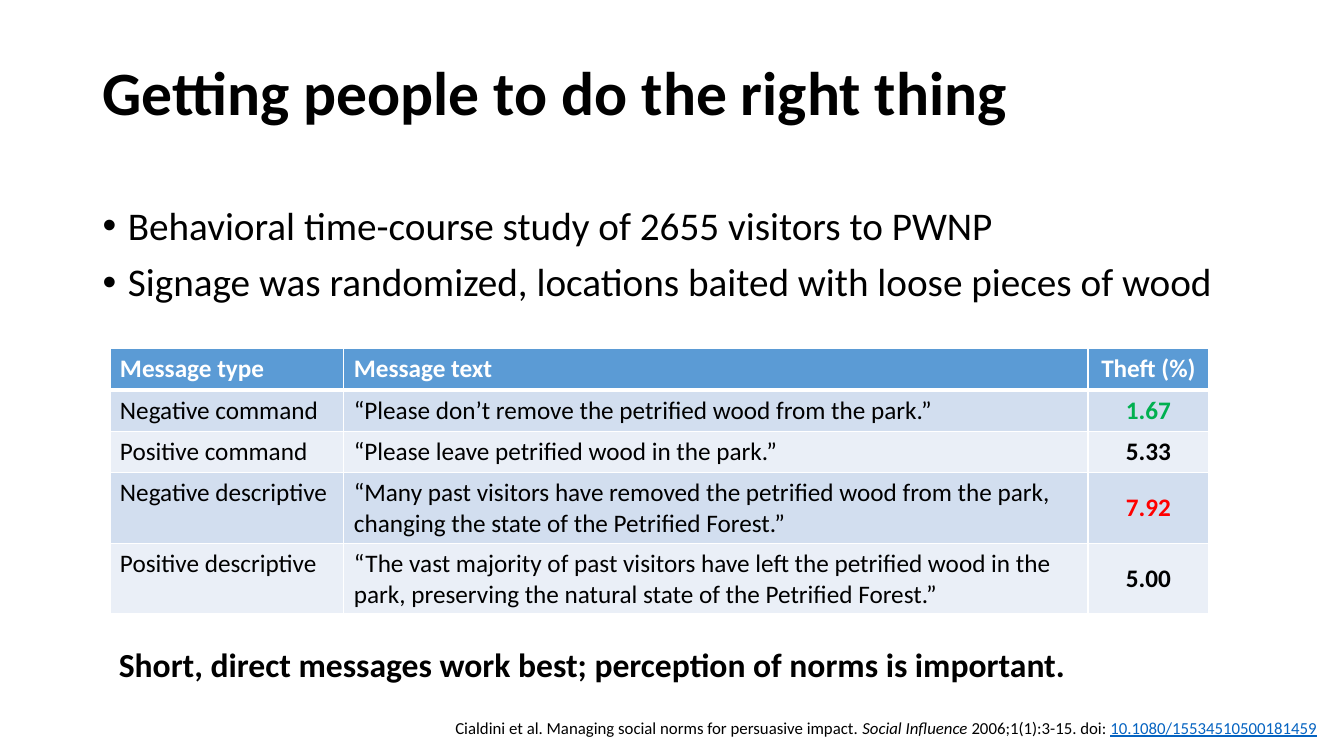
from dataclasses import dataclass

from lxml.etree import SubElement
from pptx import Presentation
from pptx.dml.color import RGBColor
from pptx.enum.text import MSO_ANCHOR as Anchor, MSO_AUTO_SIZE as AutoSize, PP_ALIGN as Align
from pptx.oxml.ns import qn
from pptx.util import Inches, Pt


@dataclass(frozen=True)
class Theme:
    font: str = "Calibri"
    text: str = "000000"
    white: str = "FFFFFF"
    header: str = "5B9BD5"
    bands: tuple = ("D2DEEF", "EAEFF7")
    best: str = "00B050"
    worst: str = "FF0000"
    link: str = "0563C1"
    title_size: int = 44
    bullet_size: int = 28
    takeaway_size: int = 24
    table_size: int = 18
    citation_size: int = 12


THEME = Theme()

ROW_HEIGHTS = (0.41, 0.41, 0.41, 0.7, 0.7)
MESSAGES = (
    ("Message type", "Message text"),
    ("Negative command", "“Please don’t remove the petrified wood from the park.”"),
    ("Positive command", "“Please leave petrified wood in the park.”"),
    ("Negative descriptive", "“Many past visitors have removed the petrified wood from the park, "
                             "changing the state of the Petrified Forest.”"),
    ("Positive descriptive", "“The vast majority of past visitors have left the petrified wood in the "
                             "park, preserving the natural state of the Petrified Forest.”"),
)
THEFT_RATES = (("Theft (%)",), ("1.67",), ("5.33",), ("7.92",), ("5.00",))
RATE_COLORS = {"1.67": THEME.best, "7.92": THEME.worst}


def set_all(target, values):
    for name, value in values.items():
        setattr(target, name, value)


def add_run(paragraph, text, size, color=THEME.text, **font_format):
    run = paragraph.add_run()
    run.text = text
    set_all(run.font, {"name": THEME.font, "size": Pt(size), **font_format})
    run.font.color.rgb = RGBColor.from_string(color)


def add_text_frame(slide, box, **frame_format):
    frame = slide.shapes.add_textbox(*map(Inches, box)).text_frame
    set_all(frame, {"word_wrap": True, **frame_format})
    return frame


def add_title(slide, text):
    frame = add_text_frame(slide, (0.92, 0.43, 11.5, 1.03), vertical_anchor=Anchor.MIDDLE)
    heading = frame.paragraphs[0]
    heading.line_spacing = 0.9
    add_run(heading, text, THEME.title_size, bold=True)


def add_bullets(slide, points):
    frame = add_text_frame(slide, (0.92, 2, 11.5, 1.41))
    for index, point in enumerate(points):
        bullet = frame.add_paragraph() if index else frame.paragraphs[0]
        set_all(bullet, {"line_spacing": 0.9, "space_before": Pt(10)})
        properties = bullet._p.get_or_add_pPr()
        properties.set("marL", str(Inches(0.25)))
        properties.set("indent", str(Inches(-0.25)))
        SubElement(properties, qn("a:buFont"), typeface="Arial")
        SubElement(properties, qn("a:buChar"), char="•")
        add_run(bullet, point, THEME.bullet_size)


def add_borders(cell, is_header):
    properties = cell._tc.get_or_add_tcPr()
    for side in "LRTB":
        width = 3 if is_header and side == "B" else 1
        line = SubElement(properties, qn(f"a:ln{side}"), w=str(Pt(width)))
        SubElement(SubElement(line, qn("a:solidFill")), qn("a:srgbClr"), val=THEME.white)


def add_study_table(slide, left, widths, rows, align=Align.LEFT, bold=False, middle_from=len(ROW_HEIGHTS)):
    """Add a banded table; rows from middle_from on are centred vertically."""
    box = (left, 3.46, sum(widths), sum(ROW_HEIGHTS))
    table = slide.shapes.add_table(len(rows), len(widths), *map(Inches, box)).table
    for column, width in zip(table.columns, widths):
        column.width = Inches(width)
    for row_index, (texts, height) in enumerate(zip(rows, ROW_HEIGHTS)):
        table.rows[row_index].height = Inches(height)
        is_header = row_index == 0
        fill = THEME.header if is_header else THEME.bands[(row_index - 1) % 2]
        for column_index, text in enumerate(texts):
            cell = table.cell(row_index, column_index)
            add_borders(cell, is_header)
            cell.fill.solid()
            cell.fill.fore_color.rgb = RGBColor.from_string(fill)
            cell.vertical_anchor = Anchor.MIDDLE if row_index >= middle_from else Anchor.TOP
            entry = cell.text_frame.paragraphs[0]
            entry.alignment = align
            color = THEME.white if is_header else RATE_COLORS.get(text, THEME.text)
            add_run(entry, text, THEME.table_size, color, bold=is_header or bold)


def add_citation(slide):
    frame = add_text_frame(slide, (4.02, 7.07, 9.14, 0.3), auto_size=AutoSize.SHAPE_TO_FIT_TEXT)
    citation = frame.paragraphs[0]
    citation.alignment = Align.RIGHT
    for text, run_format in (
        ("Cialdini et al. Managing social norms for persuasive impact. ", {}),
        ("Social Influence ", {"italic": True}),
        ("2006;1(1):3-15. doi: ", {}),
        ("10.1080/15534510500181459", {"color": THEME.link, "underline": True}),
    ):
        add_run(citation, text, THEME.citation_size, **run_format)


def add_takeaway(slide, text):
    frame = add_text_frame(slide, (1.08, 6.34, 9.68, 0.5), word_wrap=False,
                           auto_size=AutoSize.SHAPE_TO_FIT_TEXT)
    add_run(frame.paragraphs[0], text, THEME.takeaway_size, bold=True)


def main():
    deck = Presentation()
    set_all(deck, {"slide_width": Inches(13.33), "slide_height": Inches(7.5)})
    slide = deck.slides.add_slide(deck.slide_layouts[6])
    add_bullets(slide, (
        "Behavioral time-course study of 2655 visitors to PWNP",
        "Signage was randomized, locations baited with loose pieces of wood",
    ))
    add_study_table(slide, 1.09, (2.32, 7.39), MESSAGES)
    add_study_table(slide, 10.79, (1.2,), THEFT_RATES, Align.CENTER, bold=True, middle_from=3)
    add_citation(slide)
    add_takeaway(slide, "Short, direct messages work best; perception of norms is important.")
    add_title(slide, "Getting people to do the right thing")
    deck.save("out.pptx")


if __name__ == "__main__":
    main()
